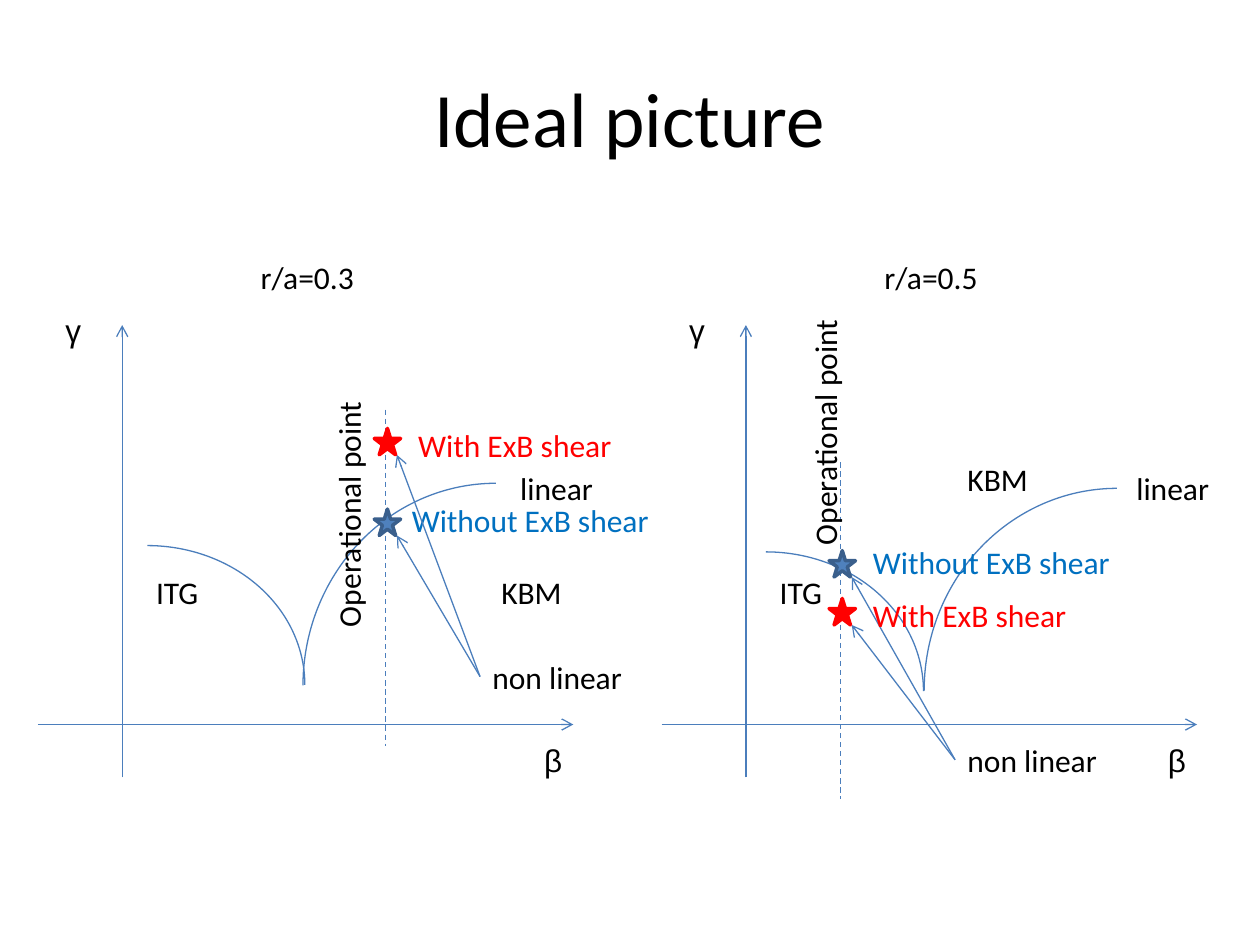
import pptx
import pptx.dml.color
import pptx.enum.dml
import pptx.enum.shapes
import pptx.enum.text
import pptx.oxml
import pptx.oxml.ns
import pptx.util

Inches = pptx.util.Inches
Pt = pptx.util.Pt
RGB = pptx.dml.color.RGBColor.from_string
SHAPE = pptx.enum.shapes.MSO_SHAPE
DASH = pptx.enum.dml.MSO_LINE.DASH

COLORS = {
    "text": "000000", "curve": "4B7EBC", "blue_star": "4F81BD",
    "blue_edge": "3A5F8C", "blue_text": "0070C0", "red": "FF0000",
}
WIDTHS = {
    "linear": 0.79, "β": 0.34, "γ": 0.31, "ITG": 0.54, "KBM": 0.69,
    "non linear": 1.24, "Operational point": 2.01,
    "Without ExB shear": 2.1, "With ExB shear": 1.75,
}
STAR_STYLES = {
    "Without ExB shear": ("blue_star", "blue_edge", "blue_text"),
    "With ExB shear": ("red", "red", "red"),
}
# Each star is (label, star top, label left, label top)
PANELS = [
    {
        "title": "r/a=0.5", "axis_x": 5.92, "point_x": 6.67, "point_top": 3.67,
        "arcs": [(4.83, 4.38, 2.5, 2.21, 0), (7.26, 3.95, 3.21, 3.06, 270)],
        "stars": [("Without ExB shear", 4.37, 6.83, 4.26),
                  ("With ExB shear", 4.75, 6.83, 4.68)],
        "labels": [("linear", 8.92, 3.67), ("KBM", 7.58, 3.6)],
        "vertical": (5.54, 3.22), "nonlinear": (7.58, 5.83),
    },
    {
        "title": "r/a=0.3", "axis_x": 0.97, "point_x": 3.06, "point_top": 3.25,
        "arcs": [(-0.08, 4.33, 2.5, 2.21, 0), (2.33, 3.91, 3.21, 3.06, 270)],
        "stars": [("Without ExB shear", 4.04, 3.17, 3.93),
                  ("With ExB shear", 3.4, 3.22, 3.33)],
        "labels": [("linear", 4.03, 3.67), ("KBM", 3.88, 4.5)],
        "vertical": (1.76, 3.87), "nonlinear": (3.81, 5.17),
    },
]


def add_label(shapes, text, left, top, color="text", rotation=0):
    box = shapes.add_textbox(
        Inches(left), Inches(top), Inches(WIDTHS.get(text, 0.95)), Inches(0.4))
    box.rotation = rotation
    frame = box.text_frame
    frame.word_wrap = False
    frame.auto_size = pptx.enum.text.MSO_AUTO_SIZE.SHAPE_TO_FIT_TEXT
    frame.text = text
    font = frame.paragraphs[0].runs[0].font
    values = {"name": "Arial" if text in "βγ" else "Calibri", "size": Pt(18)}
    for name, value in values.items():
        setattr(font, name, value)
    font.color.rgb = RGB(COLORS[color])


def add_line(shapes, start, end, arrow=True):
    connector = shapes.add_connector(
        pptx.enum.shapes.MSO_CONNECTOR.STRAIGHT,
        *(Inches(value) for value in (*start, *end)))
    line = connector.line
    line.color.rgb = RGB(COLORS["curve"])
    line.width = Pt(0.75)
    if arrow:
        tail = pptx.oxml.parse_xml(
            f'<a:tailEnd {pptx.oxml.ns.nsdecls("a")} type="arrow"/>')
        line._get_or_add_ln().append(tail)
    else:
        line.dash_style = DASH
    connector._element.spPr.append(
        pptx.oxml.parse_xml(f'<a:effectLst {pptx.oxml.ns.nsdecls("a")}/>'))


presentation = pptx.Presentation()
presentation.slide_width = Inches(10)
presentation.slide_height = Inches(7.5)
slide = presentation.slides.add_slide(presentation.slide_layouts[6])

title = slide.shapes.add_textbox(Inches(0.5), Inches(0.3), Inches(9), Inches(1.25))
title.text_frame.word_wrap = True
title.text_frame.vertical_anchor = pptx.enum.text.MSO_ANCHOR.MIDDLE
title.text_frame.text = "Ideal picture"
paragraph = title.text_frame.paragraphs[0]
paragraph.alignment = pptx.enum.text.PP_ALIGN.CENTER
for name, value in {"name": "Calibri", "size": Pt(44)}.items():
    setattr(paragraph.runs[0].font, name, value)
paragraph.runs[0].font.color.rgb = RGB(COLORS["text"])

for panel in PANELS:
    shapes = slide.shapes.add_group_shape().shapes
    axis_x, point_x = panel["axis_x"], panel["point_x"]

    for left, top, width, height, rotation in panel["arcs"]:
        arc = shapes.add_shape(
            SHAPE.ARC, Inches(left), Inches(top), Inches(width), Inches(height))
        arc.rotation = rotation
        arc.shadow.inherit = False
        arc.fill.background()
        arc.line.color.rgb = RGB(COLORS["curve"])
        arc.line.width = Pt(0.75)

    add_line(shapes, (axis_x, 6.17), (axis_x, 2.58))
    add_line(shapes, (axis_x - 0.67, 5.75), (axis_x + 3.58, 5.75))
    point_top = panel["point_top"]
    add_line(shapes, (point_x, point_top), (point_x, point_top + 2.67), arrow=False)

    nonlinear_x, nonlinear_y = panel["nonlinear"]
    for text, star_top, label_left, label_top in panel["stars"]:
        fill, edge, font_color = STAR_STYLES[text]
        star = shapes.add_shape(
            SHAPE.STAR_5_POINT, Inches(point_x - 0.09), Inches(star_top),
            Inches(0.21), Inches(0.21))
        star.shadow.inherit = False
        star.fill.solid()
        star.fill.fore_color.rgb = RGB(COLORS[fill])
        star.line.color.rgb = RGB(COLORS[edge])
        star.line.width = Pt(2)
        add_label(shapes, text, label_left, label_top, font_color)
        add_line(shapes, (nonlinear_x, nonlinear_y + 0.2),
                 (point_x + 0.09, star_top + 0.21))

    add_label(shapes, "Operational point", *panel["vertical"], rotation=270)
    shared_labels = [
        (panel["title"], axis_x + 1, 2), ("β", axis_x + 3.25, 5.83),
        ("γ", axis_x - 0.55, 2.42), ("ITG", axis_x + 0.17, 4.5),
        ("non linear", nonlinear_x, nonlinear_y),
    ]
    for text, left, top in shared_labels + panel["labels"]:
        add_label(shapes, text, left, top)

presentation.save("out.pptx")
